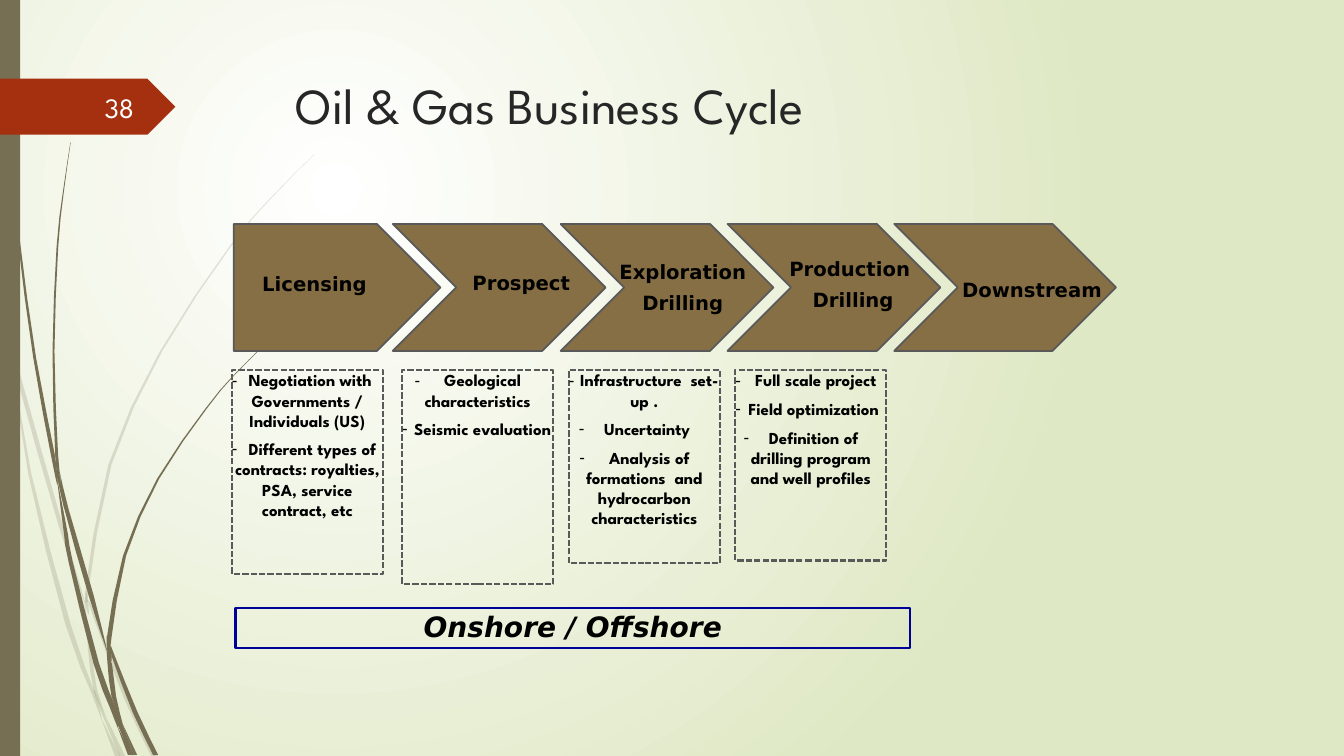
import dataclasses
import typing

import lxml.etree
import pptx
import pptx.dml.color
import pptx.enum.dml
import pptx.enum.shapes
import pptx.enum.text
import pptx.oxml.ns
import pptx.util

Pt = pptx.util.Pt
Kind = pptx.enum.shapes.MSO_SHAPE
Align = pptx.enum.text.PP_ALIGN
Anchor = pptx.enum.text.MSO_ANCHOR
qn = pptx.oxml.ns.qn


@dataclasses.dataclass(frozen=True)
class Theme:
    head: str = "League Spartan"
    label: str = "DejaVu Sans"
    white: str = "FFFFFF"
    pale: str = "DFE8C4"
    olive: str = "766F54"
    rust: str = "A53010"
    brown: str = "876F45"
    grey: str = "595959"
    navy: str = "000099"
    ink: str = "262626"
    black: str = "000000"
    cream: str = "FEFFFF"
    title: int = 36
    large: int = 20
    step: int = 14
    note: int = 12


class Box(typing.NamedTuple):
    x: float
    y: float
    w: float
    h: float


class Step(typing.NamedTuple):
    text: str
    arrow: Box
    label: Box


class Note(typing.NamedTuple):
    slot: int
    box: Box
    items: tuple[str, ...]


Knot = tuple[float, float, float]
THEME = Theme()
STEPS = [
    Step("Licensing", Box(167, 160, 147.6, 90.7), Box(145.5, 180.4, 158.4, 39.6)),
    Step("Prospect", Box(280.6, 160, 152, 90.7), Box(293.2, 179.3, 158.4, 39.6)),
    Step("Exploration\nDrilling", Box(400.5, 160, 152, 90.7), Box(408.6, 182.9, 158.4, 39.6)),
    Step("Production\n Drilling", Box(519.7, 160, 152, 90.7), Box(527.8, 180.7, 158.4, 39.6)),
    Step("Downstream", Box(638.8, 160, 158.4, 90.7), Box(658, 184.3, 158.4, 39.6)),
]
NOTES = [
    Note(1, Box(165.6, 264.4, 108, 145.6), (
        "Negotiation with Governments / Individuals (US)",
        " Different types of contracts: royalties, PSA, service contract, etc")),
    Note(2, Box(287.2, 264.4, 108, 152.6), (" Geological characteristics", " Seismic evaluation")),
    Note(3, Box(406.3, 264.4, 108, 137.8), (
        " Infrastructure  set-up .", "Uncertainty",
        " Analysis of formations  and hydrocarbon characteristics")),
    Note(4, Box(525.2, 264.4, 108, 136), (
        " Full scale project", "Field optimization",
        "Definition of drilling program and well profiles")),
]

# Grass blades: x, y and width along each centre line
FAINT: list[list[Knot]] = [
    [(0, 209, 0.3), (6.5, 232, 1.8), (7.9, 252, 0.3)],
    [(10.1, 248.4, 0.3), (13.8, 270.7, 3), (43.4, 375.5, 3), (60.7, 431, 0.5)],
    [(63.4, 429, 0.3), (67, 439, 2), (90.4, 499.6, 3), (109.8, 540, 3.6)],
    [(75.6, 512, 0.2), (87.5, 540, 3.6)],
    [(7.9, 252, 0.3), (21.2, 338, 2.2), (48.6, 446, 3.8), (66.6, 495, 2.5), (72.7, 514, 0.3)],
    [(60.5, 431.3, 0.3), (64.1, 465, 2.2), (68, 492, 2.5), (75.6, 512, 0.3)],
    [(224.6, 110.2, 0.3), (193, 142, 0.7), (164.5, 176, 1), (115, 251, 1.6),
     (78.5, 332, 2.2), (62.3, 420.5, 2.2), (63.2, 429, 0.3)],
    [(72.7, 514, 0.2), (83.9, 540, 3.6)],
    [(61.2, 422, 0.3), (62, 431.5, 2.4), (63.4, 439, 0.3)],
    [(67, 492, 0.2), (70.4, 502, 1.6), (85.7, 540, 0.4)],
]
SOLID: list[list[Knot]] = [
    [(2.5, 0, 0.7), (5.4, 79, 0.8), (13, 167.5, 1.4), (24.8, 255.6, 2), (38, 326, 2.8), (41, 346.3, 0.3)],
    [(43.2, 340, 0.3), (47.5, 363.6, 3), (65.2, 425.5, 3.6), (76.3, 464.4, 0.3)],
    [(79.2, 461.5, 0.3), (81, 469, 2.3), (96.6, 509, 3.5), (111.2, 539.3, 3.6)],
    [(41, 343.4, 0.3), (47.2, 382, 2.8), (50.4, 401, 3), (68.8, 474, 4), (80.3, 505, 4), (84.2, 519.8, 0.3)],
    [(50.4, 101.5, 0.2), (45, 139, 0.7), (41, 176.4, 1.2), (38.2, 251, 1.4), (40.5, 325, 2), (43.2, 340, 0.3)],
    [(87.8, 517.7, 0.2), (96.8, 539.3, 2.4)],
    [(39.6, 323.3, 0.2), (42, 341.5, 2), (46.1, 363.6, 0.3)],
    [(187.5, 247.7, 0.5), (166.3, 269, 0.7), (147.2, 292, 1), (113, 342, 1.5),
     (89, 397, 2.2), (78.1, 455, 3.3), (79.2, 461.5, 0.3)],
    [(84.2, 519.8, 0.2), (92.9, 539.3, 3)],
    [(76.3, 464.4, 0.2), (78.5, 475, 3.2), (81.3, 497.5, 3.3), (87.6, 517.7, 0.4)],
    [(76.3, 454.3, 0.2), (78, 464, 3), (79.6, 472.3, 0.4)],
    [(79.2, 497.5, 0.2), (85.9, 517.7, 3.6), (94.7, 539.3, 2)],
]


def tint(code: str) -> pptx.dml.color.RGBColor:
    return pptx.dml.color.RGBColor.from_string(code)


def border(shape, code: str, width: float) -> None:
    shape.line.color.rgb = tint(code)
    shape.line.width = Pt(width)


def setup(frame, text: str, anchor, inset: float = 0) -> None:
    frame.text, frame.word_wrap, frame.vertical_anchor = text, True, anchor
    frame.auto_size = pptx.enum.text.MSO_AUTO_SIZE.NONE
    frame.margin_left = frame.margin_right = Pt(inset)
    frame.margin_top = frame.margin_bottom = Pt(inset / 2)


def style(para, align, face: str, size: int, code: str, bold: bool = False) -> None:
    para.alignment = align
    para.font.name, para.font.size, para.font.bold = face, Pt(size), bold
    para.font.color.rgb = tint(code)


def finish(shape, code: str | None):
    shape.shadow.inherit = False
    shape.line.fill.background()
    if code:
        shape.fill.solid()
        shape.fill.fore_color.rgb = tint(code)
    else:
        shape.fill.background()
    return shape


def add_shape(slide, kind, box: Box, code: str | None = None):
    return finish(slide.shapes.add_shape(kind, *map(Pt, box)), code)


def add_label(shape, text: str, size: int) -> None:
    setup(shape.text_frame, text, Anchor.MIDDLE)
    for para in shape.text_frame.paragraphs:
        para.line_spacing = Pt(22)
        style(para, Align.CENTER, THEME.label, size, THEME.black, True)


def smooth(knots: list[Knot]) -> list[Knot]:
    ends = [knots[0], *knots, knots[-1]]
    curve = []
    for a, b, c, d in zip(ends, ends[1:], ends[2:], ends[3:]):
        half = [(9 * (q + r) - p - s) / 16 for p, q, r, s in zip(a, b, c, d)]
        curve += [b, tuple(half)]
    return curve + [knots[-1]]


def add_blade(slide, knots: list[Knot], alpha: int) -> None:
    curve = smooth(knots)
    edge = [(Pt(x - w / 2), Pt(y)) for x, y, w in curve]
    edge += [(Pt(x + w / 2), Pt(y)) for x, y, w in reversed(curve)]
    pen = slide.shapes.build_freeform(*edge[0])
    pen.add_line_segments(edge[1:])
    shape = finish(pen.convert_to_shape(), THEME.olive)
    if alpha < 100:
        clr = shape._element.spPr.find(".//" + qn("a:srgbClr"))
        lxml.etree.SubElement(clr, qn("a:alpha")).set("val", str(alpha * 1000))


def fill_note(slide, note: Note) -> None:
    shape = slide.placeholders[note.slot]
    shape.left, shape.top, shape.width, shape.height = map(Pt, note.box)
    border(shape, THEME.grey, 1.5)
    shape.line.dash_style = pptx.enum.dml.MSO_LINE.SQUARE_DOT
    setup(shape.text_frame, "\n".join(note.items), Anchor.TOP)
    for i, para in enumerate(shape.text_frame.paragraphs):
        para.space_before = Pt(6 if i else 0)
        style(para, Align.CENTER, THEME.head, THEME.note, THEME.black, True)
        props = para._p.get_or_add_pPr()
        props.set("marL", "0")
        props.set("indent", str(-Pt(18)))
        props.find(qn("a:defRPr")).addprevious(lxml.etree.Element(qn("a:buChar"), char="-"))


def paint(slide) -> None:
    fill = slide.background.fill
    fill.gradient()
    for stop, code in zip(fill.gradient_stops, (THEME.white, THEME.pale)):
        stop.color.rgb = tint(code)
    lin = slide._element.find(".//" + qn("a:lin"))
    ring = lxml.etree.Element(qn("a:path"), path="circle")
    lxml.etree.SubElement(ring, qn("a:fillToRect"), l="50000", t="50000", r="100000", b="100000")
    lin.getparent().replace(lin, ring)


def main() -> None:
    deck = pptx.Presentation()
    deck.slide_width, deck.slide_height = Pt(960), Pt(540)
    slide = deck.slides.add_slide(deck.slide_layouts[4])
    paint(slide)
    # Left decoration and page tag
    for blades, alpha in ((FAINT, 20), (SOLID, 100)):
        for knots in blades:
            add_blade(slide, knots, alpha)
    add_shape(slide, Kind.RECTANGLE, Box(0, 0, 14.4, 540), THEME.olive)
    add_shape(slide, Kind.PENTAGON, Box(0, 56.2, 125.3, 40), THEME.rust)
    page = slide.shapes.add_textbox(*map(Pt, Box(41.8, 61.9, 61.2, 28.8))).text_frame
    setup(page, "38", Anchor.MIDDLE, 7.2)
    style(page.paragraphs[0], Align.RIGHT, THEME.head, THEME.large, THEME.cream)
    # Title
    title = slide.shapes.title
    title.left, title.top, title.width, title.height = map(Pt, Box(204.1, 49, 702, 66.2))
    setup(title.text_frame, "Oil & Gas Business Cycle", Anchor.TOP, 7.2)
    style(title.text_frame.paragraphs[0], Align.LEFT, THEME.head, THEME.title, THEME.ink)
    # Process arrows, then their labels
    for i, step in enumerate(STEPS):
        kind = Kind.CHEVRON if i else Kind.PENTAGON
        border(add_shape(slide, kind, step.arrow, THEME.brown), THEME.grey, 1.25)
    for step in STEPS:
        add_label(slide.shapes.add_textbox(*map(Pt, step.label)), step.text, THEME.step)
    # Notes and the band below
    for note in NOTES:
        fill_note(slide, note)
    band = add_shape(slide, Kind.RECTANGLE, Box(168.2, 434.2, 481.8, 28.4))
    border(band, THEME.navy, 1.5)
    add_label(band, "Onshore / Offshore", THEME.large)
    band.text_frame.paragraphs[0].font.italic = True
    deck.save("out.pptx")


if __name__ == "__main__":
    main()
